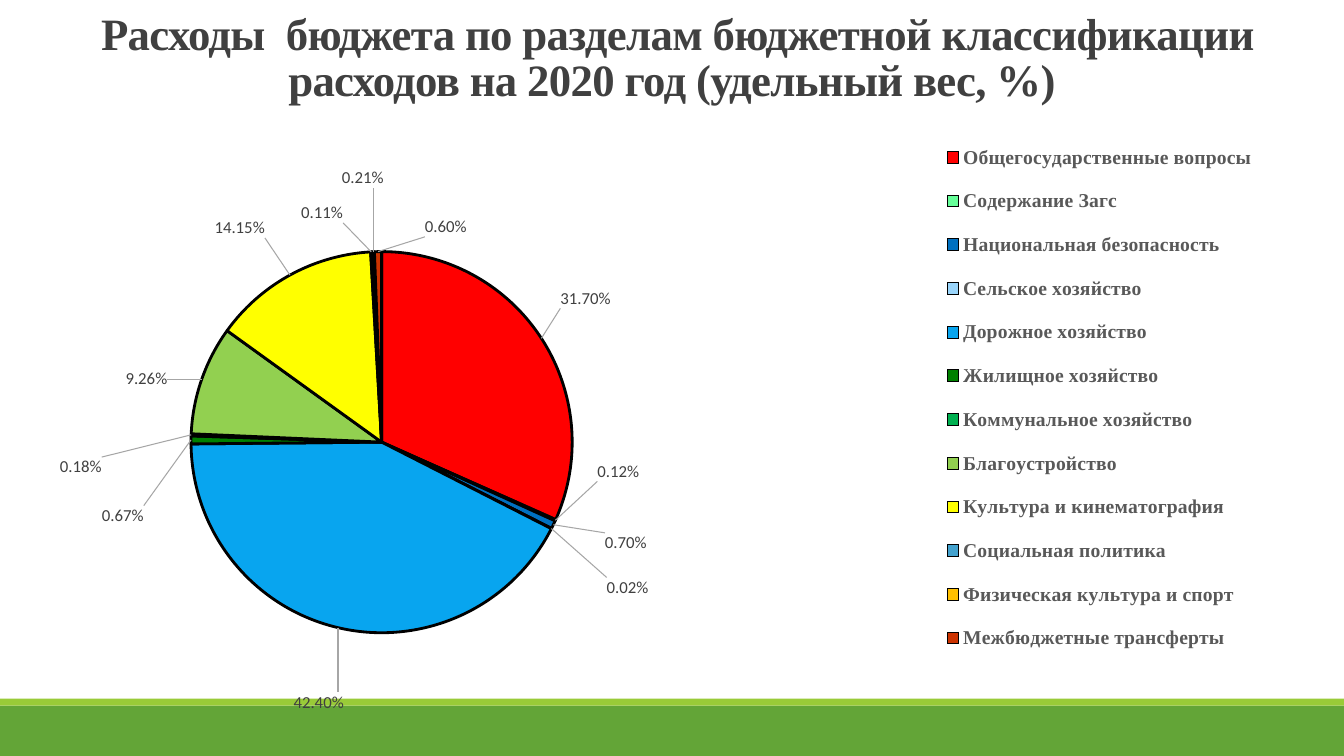
import math

from lxml import etree
from pptx import Presentation
from pptx import util as u
from pptx.chart.data import CategoryChartData
from pptx.dml.color import RGBColor
from pptx.enum import chart as charts, shapes, text
from pptx.oxml import parse_xml
from pptx.oxml.ns import nsdecls, qn

NS = nsdecls("c", "a")

# Section, share, slice colour, label colour, label centre (points)
SECTIONS = [
    ("Общегосударственные вопросы", 0.317, "FF0000", "FF0000", (417.9, 213.2)),
    ("Содержание Загс", 0.0012, "66FF99", "66FF99", (441.4, 337.1)),
    ("Национальная безопасность", 0.007, "0070C0", "0070C0", (446.8, 388.2)),
    ("Сельское хозяйство", 0.0002, "9AD5FB", "BEE6FC", (447.9, 420)),
    ("Дорожное хозяйство", 0.424, "08A5EF", "00B0F0", (227.1, 502.1)),
    ("Жилищное хозяйство", 0.0067, "008000", "008000", (87.1, 368.6)),
    ("Коммунальное хозяйство", 0.0018, "00B050", "33CC33", (57.1, 333.9)),
    ("Благоустройство", 0.0926, "92D050", "C1E3A5", (103.9, 270.7)),
    ("Культура и кинематография", 0.1415, "FFFF00", "FFFF00", (170.7, 162.9)),
    ("Социальная политика", 0.0011, "43A2CE", "358FB9", (229.6, 152.1)),
    ("Физическая культура и спорт", 0.0021, "FFC000", "FFC000", (258.6, 127.1)),
    ("Межбюджетные трансферты", 0.006, "CC3300", "CC3300", (317.9, 162.1)),
]

CHART_BOX = (-215.28, 73.44, 1177.2, 448.56)
PIE_CENTRE = (272.1, 316.1)
PIE_RADIUS = 136.2
LABEL_GAP = 4.25
LABEL_HEIGHT = 14.5


def colour(code):
    return RGBColor.from_string(code)


def layout(x, y, size=None, target=""):
    parts = [("layoutTarget", target)] if target else []
    if size:
        parts += [("xMode", "edge"), ("yMode", "edge")]
    parts += [("x", round(x, 4)), ("y", round(y, 4))]
    if size:
        parts += zip("wh", size)
    body = "".join(f'<c:{tag} val="{value}"/>' for tag, value in parts)
    return parse_xml(f"<c:layout {NS}><c:manualLayout>{body}</c:manualLayout></c:layout>")


def label_shift(angle, centre, width):
    """Move from the spot beside the slice to the label centre, as chart fractions."""
    shift = []
    directions = (math.sin(angle), -math.cos(angle))
    sizes = (width, LABEL_HEIGHT)
    for axis, (direction, size) in enumerate(zip(directions, sizes)):
        side = 0 if abs(direction) < math.sin(math.radians(5)) else math.copysign(0.5, direction)
        start = PIE_CENTRE[axis] + (PIE_RADIUS + LABEL_GAP) * direction + side * size
        shift.append((centre[axis] - start) / CHART_BOX[2 + axis])
    return shift


class BudgetSlide:
    heading_font = "Times New Roman"
    body_font = "Calibri"

    def __init__(self, deck):
        self.slide = deck.slides.add_slide(deck.slide_layouts[5])

    def style(self, font, name, size, code, bold=False):
        font.name, font.size, font.bold = name, u.Pt(size), bold
        font.color.rgb = colour(code)

    def band(self, top, height, code):
        band = self.slide.shapes.add_shape(
            shapes.MSO_SHAPE.RECTANGLE, u.Pt(0), u.Pt(top), u.Pt(960), u.Pt(height))
        band.shadow.inherit = False
        band.fill.solid()
        band.fill.fore_color.rgb = colour(code)
        band.line.fill.background()

    def title(self, wording, box):
        heading = self.slide.shapes.title
        heading.left, heading.top, heading.width, heading.height = map(u.Pt, box)
        frame = heading.text_frame
        frame.word_wrap = True
        frame.auto_size = text.MSO_AUTO_SIZE.NONE
        frame.vertical_anchor = text.MSO_ANCHOR.BOTTOM
        line = frame.paragraphs[0]
        line.alignment = text.PP_ALIGN.CENTER
        line.line_spacing = 0.85
        run = line.add_run()
        run.text = wording
        self.style(run.font, self.heading_font, 32, "404040", True)
        run.font._element.set("spc", "-50")

    def pie(self, sections):
        data = CategoryChartData(number_format="0.00%")
        data.categories = [section[0] for section in sections]
        data.add_series("Series 1", [section[1] for section in sections])
        chart = self.slide.shapes.add_chart(
            charts.XL_CHART_TYPE.PIE, *map(u.Pt, CHART_BOX), data).chart
        chart.has_title = False
        self.style(chart.font, self.body_font, 10, "000000")
        chart.plots[0].vary_by_categories = True

        # Plot area
        area = chart._chartSpace.find(".//" + qn("c:plotArea"))
        for old in area.findall(qn("c:layout")):
            area.remove(old)
        area.insert(0, layout(0.033, 0.237, (0.763, 0.607), "inner"))

        self.legend(chart)
        self.slices(chart.plots[0].series[0], sections)

    def legend(self, chart):
        chart.has_legend = True
        legend = chart.legend
        legend.position = charts.XL_LEGEND_POSITION.BOTTOM
        legend.include_in_layout = False
        self.style(legend.font, self.heading_font, 14, "595959", True)
        node = legend._element
        for old in node.findall(qn("c:layout")):
            node.remove(old)
        node.find(qn("c:legendPos")).addnext(layout(0.745, 0.035, (0.21, 0.87)))

    def slices(self, series, sections):
        # Shared label settings and leader lines
        labels = series.data_labels
        labels.show_value = True
        labels.number_format = "0.00%"
        labels.number_format_is_linked = False
        self.style(labels.font, self.body_font, 12, "404040")
        node = labels._element
        leaders = node.find(qn("c:showLeaderLines"))
        if leaders is None:
            leaders = etree.SubElement(node, qn("c:showLeaderLines"))
        leaders.set("val", "1")
        leaders.addnext(parse_xml(
            f'<c:leaderLines {NS}><c:spPr><a:ln w="9525"><a:solidFill>'
            '<a:srgbClr val="A6A6A6"/></a:solidFill></a:ln></c:spPr></c:leaderLines>'))

        # Slices with their labels
        total = sum(section[1] for section in sections)
        passed = 0
        for index, (_, share, fill, label_fill, centre) in enumerate(sections):
            point = series.points[index]
            point.format.fill.solid()
            point.format.fill.fore_color.rgb = colour(fill)
            point.format.line.color.rgb = colour("000000")
            point.format.line.width = u.Pt(2)
            angle = 2 * math.pi * (passed + share / 2) / total
            passed += share
            width = 36 if share >= 0.1 else 30
            self.label(point.data_label, label_fill, label_shift(angle, centre, width))

    def label(self, label, fill, shift):
        self.style(label.font, self.body_font, 12, "404040")
        label.position = charts.XL_LABEL_POSITION.BEST_FIT
        index = label._get_or_add_dLbl().find(qn("c:idx"))
        index.addnext(parse_xml(
            f'<c:spPr {NS}><a:solidFill><a:srgbClr val="{fill}"/></a:solidFill></c:spPr>'))
        index.addnext(parse_xml(f'<c:numFmt {NS} formatCode="0.00%" sourceLinked="0"/>'))
        index.addnext(layout(*shift))


def main():
    deck = Presentation()
    deck.slide_width, deck.slide_height = u.Pt(960), u.Pt(540)
    budget = BudgetSlide(deck)

    # Footer bands
    budget.band(504, 36, "63A537")
    budget.band(499, 5, "99CB38")

    # Heading and chart
    budget.title(" Расходы  бюджета по разделам бюджетной классификации "
                 "расходов на 2020 год (удельный вес, %)", (19.44, 11.52, 920.88, 67.68))
    budget.pie(SECTIONS)

    deck.save("out.pptx")


if __name__ == "__main__":
    main()
